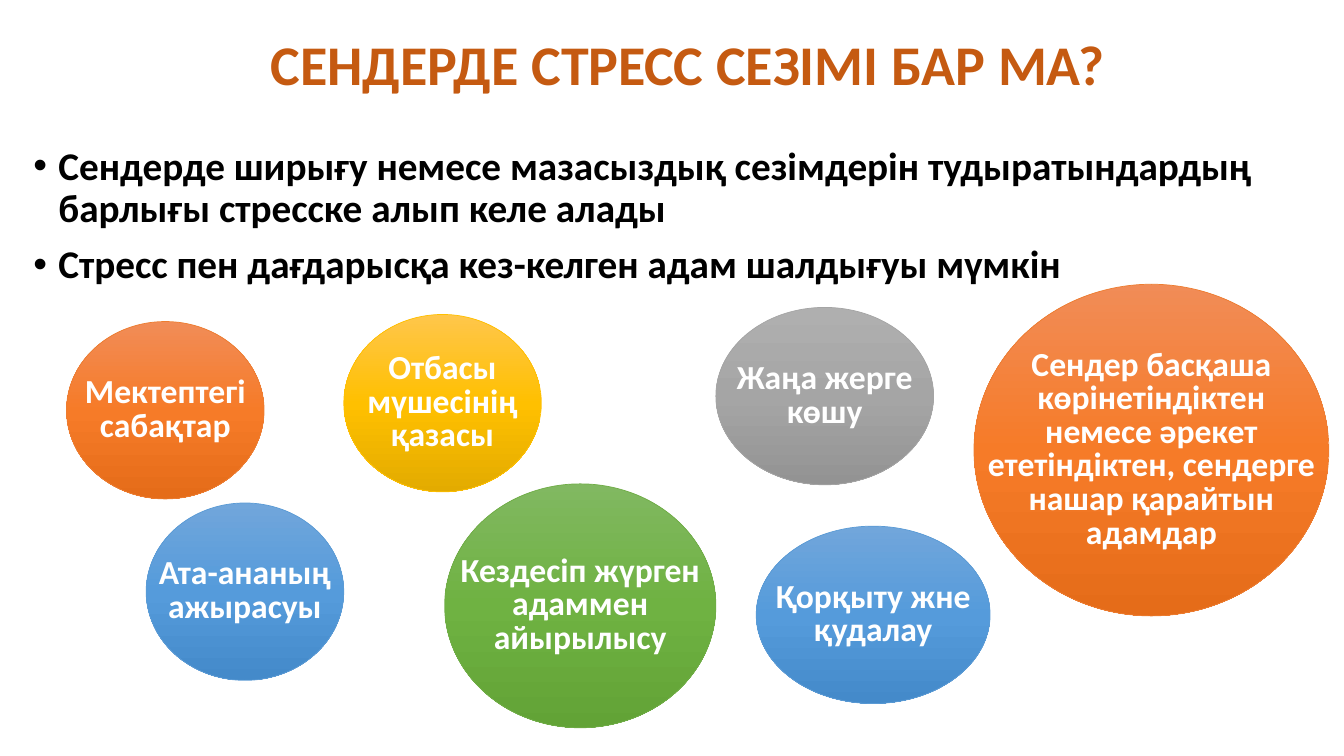
from copy import deepcopy

from pptx import Presentation, util as u
from pptx.dml.color import RGBColor
from pptx.enum import shapes, text

WIDTH, HEIGHT = 13.33, 7.5
FONT = "Calibri"
RUST = RGBColor(0xC5, 0x5A, 0x11)
BLACK = RGBColor(0, 0, 0)
WHITE = RGBColor(0xFF, 0xFF, 0xFF)


def palette(*codes):
    return [RGBColor.from_string(code) for code in codes]


# Outline, then the gradient from top to bottom
ORANGE = palette("ED7D31", "F18C57", "F67B28", "E56C19")
BLUE = palette("5B9BD5", "71A6DB", "559BDB", "448ACA")
GOLD = palette("FFC000", "FFC64B", "FFC000", "E3AB00")
GREEN = palette("70AD47", "81B861", "6FB242", "62A336")
GREY = palette("A5A5A5", "AFAFAF", "A5A5A5", "939393")

TITLE = "СЕНДЕРДЕ СТРЕСС СЕЗІМІ БАР МА?"
STATEMENTS = [
    "Сендерде ширығу немесе мазасыздық сезімдерін тудыратындардың "
    "барлығы стресске алып келе алады",
    "Стресс пен дағдарысқа кез-келген адам шалдығуы мүмкін",
]

# Stress causes: lines, colours, left, top, width, height in inches
SMALL = (1.96, 1.76)
CAUSES = [
    (["Мектептегі", "сабақтар"], ORANGE, 0.66, 3.19, *SMALL),
    (["Ата-ананың", "ажырасуы"], BLUE, 1.45, 4.99, *SMALL),
    (["Отбасы", "мүшесінің", "қазасы"], GOLD, 3.41, 3.12, *SMALL),
    (["Кездесіп жүрген", "адаммен", "айырылысу"], GREEN, 4.41, 4.8, 2.69, 2.42),
    (["Жаңа жерге", "көшу"], GREY, 7.1, 3.05, 2.16, 1.76),
    (["Қорқыту жне", "қудалау"], BLUE, 7.5, 5.22, 2.32, 1.76),
    (["Сендер басқаша", "көрінетіндіктен", "немесе әрекет",
      "ететіндіктен, сендерге", "нашар қарайтын", "адамдар"],
     ORANGE, 9.66, 2.82, 3.52, 3.29),
]


def write(frame, paragraphs, *, size, color, align, spacing, before=0,
          anchor=text.MSO_ANCHOR.MIDDLE, wrap=True, indent=None):
    """Fill a text frame with bold paragraphs in one format."""
    frame.auto_size = text.MSO_AUTO_SIZE.NONE
    frame.word_wrap = wrap
    frame.vertical_anchor = anchor
    frame.text = "\n".join(paragraphs)
    for paragraph in frame.paragraphs:
        paragraph.alignment = align
        paragraph.line_spacing = spacing
        paragraph.space_before = u.Pt(before)
        if indent is not None:
            properties = paragraph._p.get_or_add_pPr()
            properties.set("marL", str(u.Inches(indent)))
            properties.set("indent", str(-u.Inches(indent)))
        for run in paragraph.runs:
            run.font.name = FONT
            run.font.size = u.Pt(size)
            run.font.bold = True
            run.font.color.rgb = color


def place(placeholder, left, top, width, height):
    placeholder.left, placeholder.top = u.Inches(left), u.Inches(top)
    placeholder.width, placeholder.height = u.Inches(width), u.Inches(height)


def shade(bubble, colors):
    """Give a vertical gradient with three evenly spaced stops."""
    bubble.fill.gradient()
    bubble.fill.gradient_angle = 270
    first_stop = bubble._element.spPr.xpath("./a:gradFill/a:gsLst/a:gs")[0]
    first_stop.addnext(deepcopy(first_stop))
    for index, (stop, color) in enumerate(zip(bubble.fill.gradient_stops, colors)):
        stop.position = index / 2
        stop.color.rgb = color


def add_cause(slide, lines, colors, left, top, width, height):
    bubble = slide.shapes.add_shape(
        shapes.MSO_SHAPE.OVAL, *map(u.Inches, (left, top, width, height)))
    bubble.shadow.inherit = False
    outline, *gradient = colors
    shade(bubble, gradient)
    bubble.line.color.rgb = outline
    bubble.line.width = u.Pt(0.5)
    write(bubble.text_frame, ["\v".join(lines)], size=24, color=WHITE,
          align=text.PP_ALIGN.CENTER, spacing=u.Pt(24), wrap=False)


def main():
    deck = Presentation()
    deck.slide_width, deck.slide_height = u.Inches(WIDTH), u.Inches(HEIGHT)
    slide = deck.slides.add_slide(deck.slide_layouts.get_by_name("Title and Content"))

    # Heading
    heading = slide.shapes.title
    place(heading, 1.39, 0.18, 10.86, 0.98)
    write(heading.text_frame, [TITLE], size=40, color=RUST,
          align=text.PP_ALIGN.CENTER, spacing=0.9)

    # Bulleted statements
    statements = slide.placeholders[1]
    place(statements, 0.23, 1.4, 12.87, 1.82)
    write(statements.text_frame, STATEMENTS, size=28, color=BLACK,
          align=text.PP_ALIGN.LEFT, spacing=0.9, before=10,
          anchor=text.MSO_ANCHOR.TOP, indent=0.25)

    # Bubbles with the causes of stress
    for cause in CAUSES:
        add_cause(slide, *cause)

    deck.save("out.pptx")


if __name__ == "__main__":
    main()
